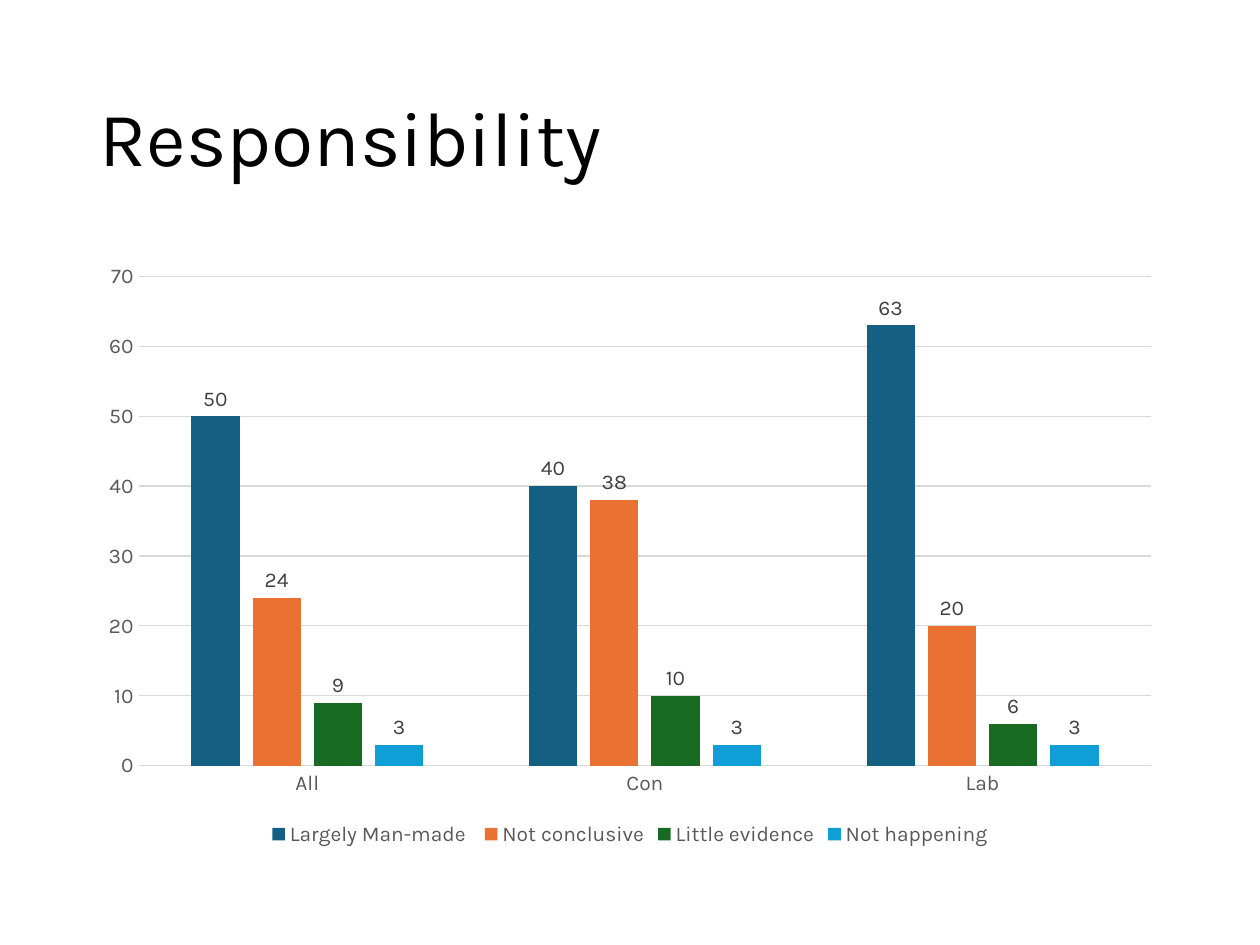
from dataclasses import dataclass

from pptx import Presentation
from pptx.chart.data import CategoryChartData
from pptx.chart.series import BarSeries
from pptx.dml.color import RGBColor
from pptx.enum.chart import (XL_CHART_TYPE, XL_LABEL_POSITION,
                             XL_LEGEND_POSITION, XL_TICK_MARK)
from pptx.enum.text import MSO_ANCHOR, PP_ALIGN
from pptx.slide import Slide
from pptx.text.text import Font
from pptx.util import Inches, Pt


@dataclass(frozen=True)
class Theme:
    font: str = "Karla"
    title: str = "000000"
    axis: str = "595959"
    label: str = "404040"
    grid: str = "D9D9D9"
    title_size: float = 44
    chart_size: float = 12
    line_width: float = 0.75


@dataclass(frozen=True)
class Answer:
    name: str
    values: tuple[int, ...]
    color: str


THEME = Theme()
LEFT, WIDTH = Inches(0.69), Inches(8.62)
PARTIES = ("All", "Con", "Lab")
ANSWERS = (
    Answer("Largely Man-made ", (50, 40, 63), "156082"),
    Answer("Not conclusive", (24, 38, 20), "E97132"),
    Answer("Little evidence", (9, 10, 6), "196B24"),
    Answer("Not happening", (3, 3, 3), "0F9ED5"),
)


def set_font(font: Font, size: float, color: str) -> None:
    font.name = THEME.font
    font.size = Pt(size)
    font.bold = False
    font.color.rgb = RGBColor.from_string(color)


def set_line(line, color: str) -> None:
    line.width = Pt(THEME.line_width)
    line.color.rgb = RGBColor.from_string(color)


def add_title(s: Slide, text: str) -> None:
    sp = s.shapes.title
    sp.left, sp.top, sp.width, sp.height = LEFT, Inches(0.4), WIDTH, Inches(1.45)
    tf = sp.text_frame
    tf.text = text
    tf.vertical_anchor = MSO_ANCHOR.MIDDLE
    p = tf.paragraphs[0]
    p.alignment = PP_ALIGN.LEFT
    p.line_spacing = 0.9
    set_font(p.font, THEME.title_size, THEME.title)


def style_series(series: BarSeries, answer: Answer) -> None:
    series.format.fill.solid()
    series.format.fill.fore_color.rgb = RGBColor.from_string(answer.color)
    series.invert_if_negative = False
    labels = series.data_labels
    labels.show_value = True
    labels.position = XL_LABEL_POSITION.OUTSIDE_END
    set_font(labels.font, THEME.chart_size, THEME.label)


def add_answer_chart(s: Slide) -> None:
    data = CategoryChartData()
    data.categories = PARTIES
    for answer in ANSWERS:
        data.add_series(answer.name, answer.values)
    chart = s.shapes.add_chart(XL_CHART_TYPE.COLUMN_CLUSTERED, LEFT, Inches(2),
                               WIDTH, Inches(4.76), data).chart
    chart.has_title = False
    set_font(chart.font, THEME.chart_size, THEME.axis)
    chart.has_legend = True
    chart.legend.position = XL_LEGEND_POSITION.BOTTOM
    chart.legend.include_in_layout = False
    set_font(chart.legend.font, THEME.chart_size, THEME.axis)

    plot = chart.plots[0]
    plot.gap_width, plot.overlap = 219, -27
    plot.vary_by_categories = False
    for series, answer in zip(plot.series, ANSWERS):
        style_series(series, answer)

    for axis in (chart.category_axis, chart.value_axis):
        axis.major_tick_mark = axis.minor_tick_mark = XL_TICK_MARK.NONE
        set_font(axis.tick_labels.font, THEME.chart_size, THEME.axis)
    set_line(chart.category_axis.format.line, THEME.grid)
    chart.value_axis.format.line.fill.background()
    chart.value_axis.has_major_gridlines = True
    set_line(chart.value_axis.major_gridlines.format.line, THEME.grid)


def main() -> None:
    prs = Presentation()
    prs.slide_width, prs.slide_height = Inches(10), Inches(7.5)
    s = prs.slides.add_slide(prs.slide_layouts[5])
    add_title(s, "Responsibility")
    add_answer_chart(s)
    prs.save("out.pptx")


if __name__ == "__main__":
    main()
